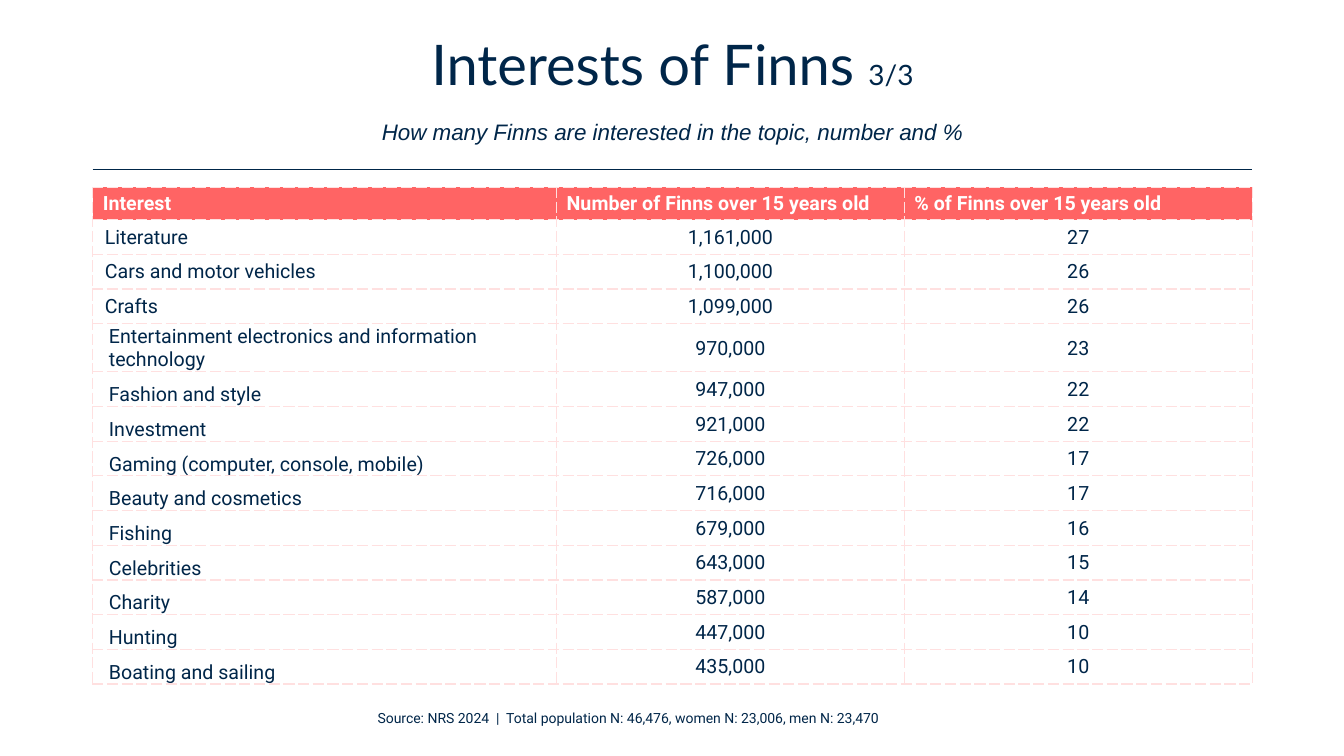
from dataclasses import dataclass

from lxml.etree import SubElement
from pptx import Presentation
from pptx.dml.color import RGBColor
from pptx.enum.shapes import MSO_CONNECTOR
from pptx.enum.text import MSO_ANCHOR, MSO_AUTO_SIZE, PP_ALIGN
from pptx.oxml.ns import qn
from pptx.util import Inches, Pt


@dataclass(frozen=True)
class Theme:
    """Colours, fonts and type sizes of the slide."""

    navy: str = "002649"
    coral: str = "FF6464"
    blush: str = "FFE0E0"
    white: str = "FFFFFF"
    title_font: str = "Lato"
    subtitle_font: str = "Arial"
    body_font: str = "Roboto"
    title_size: int = 40
    page_size: int = 20
    subtitle_size: int = 16
    table_size: int = 14
    source_size: int = 10


THEME = Theme()
HEADERS = ("Interest", "Number of Finns over 15 years old", "% of Finns over 15 years old")
INTERESTS = (
    ("Literature", "1,161,000", "27"),
    ("Cars and motor vehicles", "1,100,000", "26"),
    ("Crafts", "1,099,000", "26"),
    ("Entertainment electronics and information technology", "970,000", "23"),
    ("Fashion and style", "947,000", "22"),
    ("Investment", "921,000", "22"),
    ("Gaming (computer, console, mobile)", "726,000", "17"),
    ("Beauty and cosmetics", "716,000", "17"),
    ("Fishing", "679,000", "16"),
    ("Celebrities", "643,000", "15"),
    ("Charity", "587,000", "14"),
    ("Hunting", "447,000", "10"),
    ("Boating and sailing", "435,000", "10"),
)
WRAPPED_ROW = 4


def add_run(paragraph, text, font, size, color=THEME.navy, bold=False, italic=False):
    """Append one formatted run to a paragraph."""
    run = paragraph.add_run()
    run.text = text
    run.font.name = font
    run.font.size = Pt(size)
    run.font.bold = bold
    run.font.italic = italic
    run.font.color.rgb = RGBColor.from_string(color)


def set_margins(target, left, top, right, bottom):
    """Set the inner margins of a cell, in inches."""
    target.margin_left, target.margin_top = Inches(left), Inches(top)
    target.margin_right, target.margin_bottom = Inches(right), Inches(bottom)


def add_title(slide, left, top, width, height):
    """Place the title with its page count and subtitle."""
    title = slide.shapes.title
    title.left, title.top = Inches(left), Inches(top)
    title.width, title.height = Inches(width), Inches(height)
    frame = title.text_frame
    frame.word_wrap = True
    frame.auto_size = MSO_AUTO_SIZE.NONE
    frame.vertical_anchor = MSO_ANCHOR.MIDDLE
    paragraph = frame.paragraphs[0]
    paragraph.alignment = PP_ALIGN.CENTER
    paragraph.line_spacing = Pt(35)
    paragraph.space_after = Pt(18)
    add_run(paragraph, "Interests of Finns ", THEME.title_font, THEME.title_size)
    add_run(paragraph, "3/3", THEME.title_font, THEME.page_size)
    paragraph.add_line_break()
    add_run(paragraph, "How many Finns are interested in the topic, number and %",
            THEME.subtitle_font, THEME.subtitle_size, italic=True)


def add_rule(slide, left, top, width):
    """Draw the horizontal line below the title."""
    rule = slide.shapes.add_connector(
        MSO_CONNECTOR.STRAIGHT, Inches(left), Inches(top), Inches(left + width), Inches(top))
    rule.line.color.rgb = RGBColor.from_string(THEME.navy)
    rule.line.width = Pt(1)
    SubElement(rule._element.spPr, qn("a:effectLst"))


def set_borders(cell):
    """Give a cell dashed borders on all sides, ahead of its fill."""
    properties = cell._tc.get_or_add_tcPr()
    for side in ("a:lnL", "a:lnR", "a:lnT", "a:lnB"):
        border = SubElement(properties, qn(side), w=str(Pt(1)))
        fill = SubElement(border, qn("a:solidFill"))
        SubElement(fill, qn("a:srgbClr"), val=THEME.blush)
        SubElement(border, qn("a:prstDash"), val="sysDash")


def format_header(cell, text):
    """Fill in one header cell."""
    set_borders(cell)
    cell.fill.solid()
    cell.fill.fore_color.rgb = RGBColor.from_string(THEME.coral)
    cell.vertical_anchor = MSO_ANCHOR.MIDDLE
    set_margins(cell, 0.1, 0.04, 0.1, 0.04)
    add_run(cell.text_frame.paragraphs[0], text, THEME.body_font, THEME.table_size,
            THEME.white, bold=True)


def format_value(cell, text, row, column):
    """Fill in one body cell: names on the left, figures centred."""
    set_borders(cell)
    cell.fill.background()
    lower_name = column == 0 and row >= WRAPPED_ROW
    cell.vertical_anchor = MSO_ANCHOR.BOTTOM if lower_name else MSO_ANCHOR.MIDDLE
    indent = 0.01 if column else 0.16 if lower_name else 0.12
    set_margins(cell, indent, 0.01, 0.01, 0)
    paragraph = cell.text_frame.paragraphs[0]
    paragraph.alignment = PP_ALIGN.CENTER if column else PP_ALIGN.LEFT
    add_run(paragraph, text, THEME.body_font, THEME.table_size)


def add_interest_table(slide, left, top, width, height):
    """Build the table of interests inside the given box."""
    table = slide.shapes.add_table(
        len(INTERESTS) + 1, len(HEADERS),
        Inches(left), Inches(top), Inches(width), Inches(height)).table
    table.first_row = True
    table.horz_banding = False
    for column, share in zip(table.columns, (0.4, 0.3, 0.3)):
        column.width = Inches(width * share)
    header_height, wrapped_height = 0.32, 0.47
    row_height = (height - header_height - wrapped_height) / (len(INTERESTS) - 1)
    for row in table.rows:
        row.height = Inches(row_height)
    table.rows[0].height = Inches(header_height)
    table.rows[WRAPPED_ROW].height = Inches(wrapped_height)
    for column, text in enumerate(HEADERS):
        format_header(table.cell(0, column), text)
    for row, values in enumerate(INTERESTS, start=1):
        for column, text in enumerate(values):
            format_value(table.cell(row, column), text, row, column)


def add_source(slide, left, top, width, height):
    """Place the source line at the foot of the slide."""
    box = slide.shapes.add_textbox(Inches(left), Inches(top), Inches(width), Inches(height))
    frame = box.text_frame
    frame.word_wrap = True
    frame.auto_size = MSO_AUTO_SIZE.SHAPE_TO_FIT_TEXT
    paragraph = frame.paragraphs[0]
    paragraph.alignment = PP_ALIGN.CENTER
    add_run(paragraph,
            "Source: NRS 2024 \u00a0|\u00a0 Total population N: 46,476, women N: 23,006, men N: 23,470"
            .replace(" \u00a0|", "\u00a0 |"),
            THEME.body_font, THEME.source_size)


def main():
    """Build the slide and save it."""
    presentation = Presentation()
    presentation.slide_width, presentation.slide_height = Inches(13.33), Inches(7.5)
    slide = presentation.slides.add_slide(presentation.slide_layouts[5])
    left, width = 0.92, 11.5
    add_source(slide, 3, 6.99, 6.46, 0.27)
    add_title(slide, left, 0.42, width, 1.07)
    add_rule(slide, left, 1.68, width)
    add_interest_table(slide, left, 1.86, width, 4.92)
    presentation.save("out.pptx")


if __name__ == "__main__":
    main()
